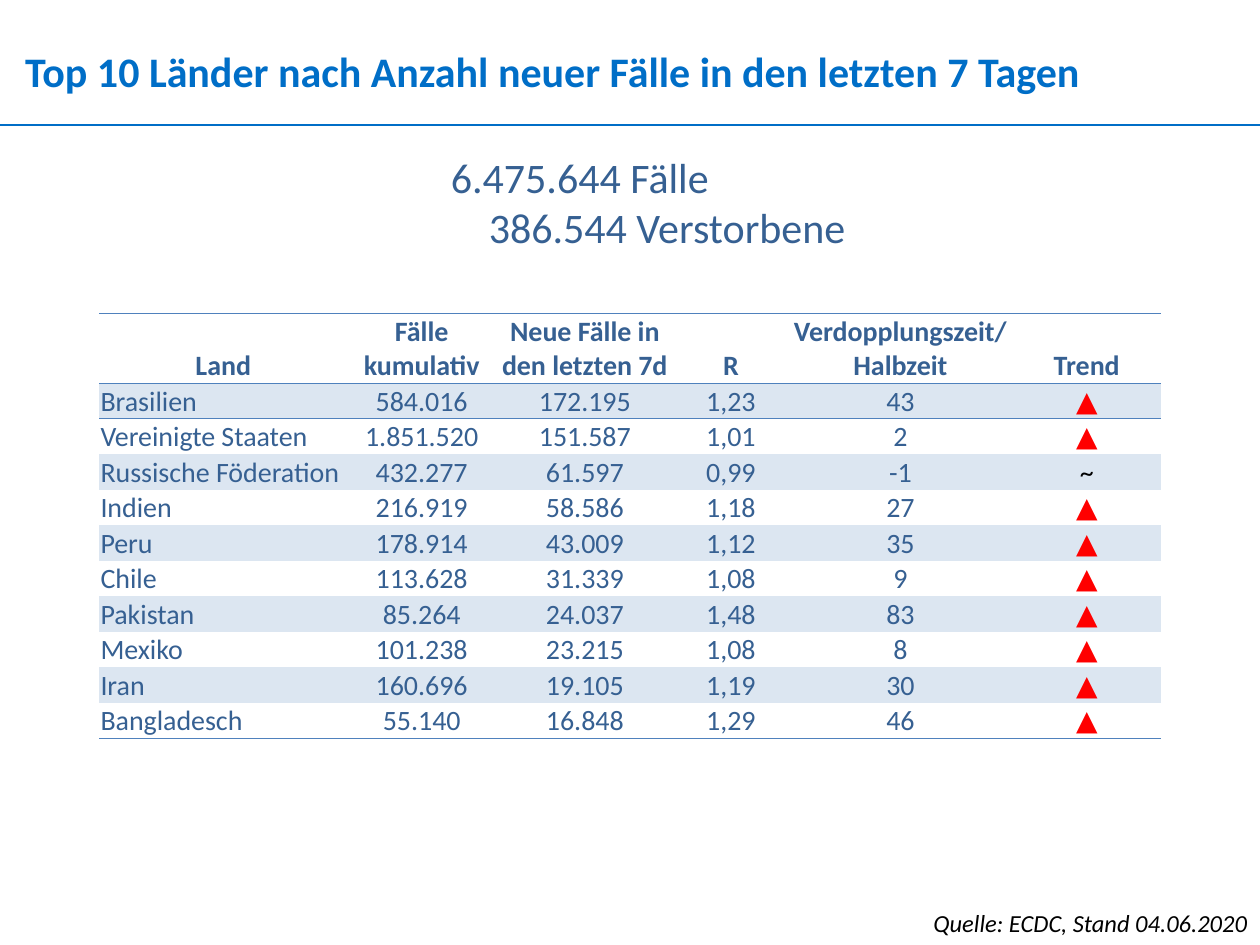
import pptx
import pptx.util
import pptx.dml.color
import pptx.enum.shapes
import pptx.enum.text
import pptx.oxml
from lxml import etree

Pt = pptx.util.Pt
Align = pptx.enum.text.PP_ALIGN
Anchor = pptx.enum.text.MSO_ANCHOR
NS = "http://schemas.openxmlformats.org/drawingml/2006/main"
HUES = {"blue": "006EC7", "text": "366092", "band": "DCE6F1",
        "rule": "4F81BD", "red": "FF0000", "black": "000000"}


def style(para, hue, align=Align.LEFT, **form):
    para.alignment = align
    font = para.font
    for key, val in {"name": "Calibri", **form}.items():
        setattr(font, key, val)
    font.color.rgb = pptx.dml.color.RGBColor.from_string(HUES[hue])


def edge(cell, side):
    """Draw a thin rule on one side of a cell: T or B."""
    cell._tc.get_or_add_tcPr().append(pptx.oxml.parse_xml(
        f'<a:ln{side} xmlns:a="{NS}" w="{Pt(0.5)}"><a:solidFill>'
        f'<a:srgbClr val="{HUES["rule"]}"/></a:solidFill></a:ln{side}>'))


deck = pptx.Presentation()
deck.slide_width, deck.slide_height = Pt(720), Pt(540)
slide = deck.slides.add_slide(deck.slide_layouts[5])
shapes = slide.shapes

# Title and rule
title = shapes.title
place = {"left": 14.4, "top": 26, "width": 693, "height": 29}
for key, val in place.items():
    setattr(title, key, Pt(val))
frame = title.text_frame
form = {"text": "Top 10 Länder nach Anzahl neuer Fälle in den letzten 7 Tagen",
        "margin_left": 0, "margin_right": 0, "margin_top": 0, "margin_bottom": 0,
        "vertical_anchor": Anchor.TOP, "word_wrap": True,
        "auto_size": pptx.enum.text.MSO_AUTO_SIZE.NONE}
for key, val in form.items():
    setattr(frame, key, val)
style(frame.paragraphs[0], "blue", size=Pt(24), bold=True)

rule = shapes.add_connector(pptx.enum.shapes.MSO_CONNECTOR.STRAIGHT,
                            0, Pt(71.5), Pt(720), Pt(71.5))
rule.line.width = Pt(1.5)
rule.line.color.rgb = pptx.dml.color.RGBColor.from_string(HUES["blue"])
etree.SubElement(rule._element.spPr, f"{{{NS}}}effectLst")

# Totals
frame = shapes.add_textbox(Pt(250.5), Pt(83), Pt(242), Pt(65.5)).text_frame
frame.word_wrap = True
frame.text = "6.475.644 Fälle\n386.544 Verstorbene"
for para in frame.paragraphs:
    style(para, "text", size=Pt(24))
frame.paragraphs[1]._p.get_or_add_pPr().set("marL", str(Pt(21.7)))

# Country table
rows = [
    ("Land", "Fälle kumulativ", "Neue Fälle in den letzten 7d", "R",
     "Verdopplungszeit/Halbzeit", "Trend"),
    ("Brasilien", "584.016", "172.195", "1,23", "43", "▲"),
    ("Vereinigte Staaten", "1.851.520", "151.587", "1,01", "2", "▲"),
    ("Russische Föderation", "432.277", "61.597", "0,99", "-1", "~"),
    ("Indien", "216.919", "58.586", "1,18", "27", "▲"),
    ("Peru", "178.914", "43.009", "1,12", "35", "▲"),
    ("Chile", "113.628", "31.339", "1,08", "9", "▲"),
    ("Pakistan", "85.264", "24.037", "1,48", "83", "▲"),
    ("Mexiko", "101.238", "23.215", "1,08", "8", "▲"),
    ("Iran", "160.696", "19.105", "1,19", "30", "▲"),
    ("Bangladesch", "55.140", "16.848", "1,29", "46", "▲"),
]
widths = [141.8, 85, 101.5, 65.5, 128.2, 84.8]
head, step = 40, 20.3
last = len(rows) - 1
table = shapes.add_table(len(rows), len(widths), Pt(56.7), Pt(179),
                         Pt(sum(widths)), Pt(head + step * last)).table
# Built-in style without fills or grid
table._tbl.tblPr[0].text = "{2D5ABB26-0587-4C30-8999-92F81FD0307C}"
for col, wide in zip(table.columns, widths):
    col.width = Pt(wide)

marks = {"▲": "red", "~": "black"}
pad = {"margin_left": Pt(0.75), "margin_right": Pt(0.75),
       "margin_top": Pt(0.75), "margin_bottom": 0}
for r, row in enumerate(rows):
    table.rows[r].height = Pt(step if r else head)
    for c, text in enumerate(row):
        cell = table.cell(r, c)
        cell.text = text
        for key, val in pad.items():
            setattr(cell, key, val)
        cell.vertical_anchor = Anchor.MIDDLE if text in marks else Anchor.BOTTOM
        if r < 2:
            edge(cell, "T")
        if r in (0, last):
            edge(cell, "B")
        if r % 2:
            cell.fill.solid()
            cell.fill.fore_color.rgb = pptx.dml.color.RGBColor.from_string(HUES["band"])
        else:
            cell.fill.background()
        style(cell.text_frame.paragraphs[0], marks.get(text, "text"),
              Align.LEFT if r and c == 0 else Align.CENTER,
              size=Pt(16), bold=r == 0)

# Source note
frame = shapes.add_textbox(Pt(465), Pt(515.5), Pt(255), Pt(24.5)).text_frame
frame.word_wrap = True
frame.text = "Quelle: ECDC, Stand 04.06.2020"
style(frame.paragraphs[0], "black", Align.RIGHT, size=Pt(14), italic=True)

deck.save("out.pptx")
